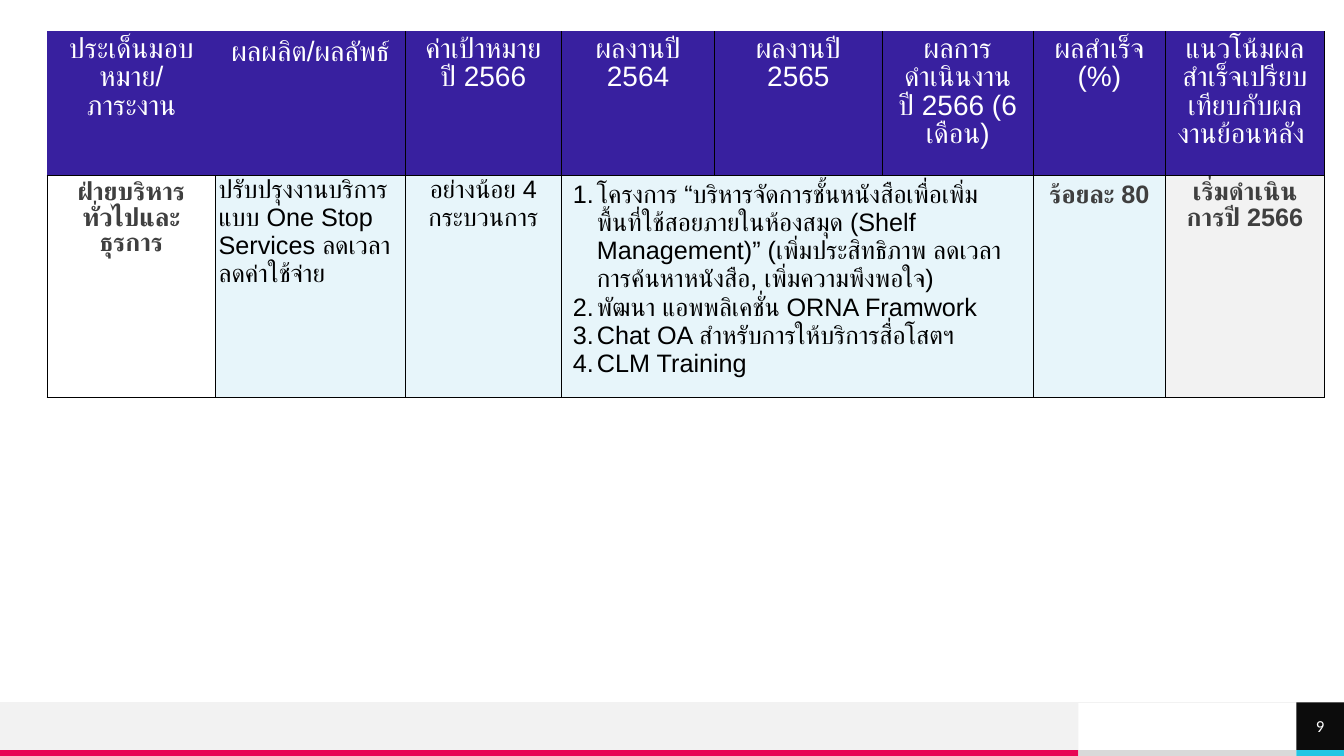
from lxml.etree import SubElement
from pptx import Presentation
from pptx.dml.color import RGBColor
from pptx.enum.shapes import MSO_CONNECTOR, MSO_SHAPE
from pptx.enum.text import MSO_ANCHOR, PP_ALIGN
from pptx.oxml.ns import qn
from pptx.util import Cm, Pt

BLACK = RGBColor(0x00, 0x00, 0x00)
INK = RGBColor(0x0C, 0x0C, 0x0C)
DARK = RGBColor(0x3F, 0x3F, 0x3F)
WHITE = RGBColor(0xFF, 0xFF, 0xFF)
LIGHT = RGBColor(0xF2, 0xF2, 0xF2)
SILVER = RGBColor(0xD9, 0xD9, 0xD9)
VIOLET = RGBColor(0x38, 0x20, 0x9F)
PALE_BLUE = RGBColor(0xE7, 0xF5, 0xFA)
CYAN = RGBColor(0x25, 0xC6, 0xE3)
PINK = RGBColor(0xE8, 0x05, 0x54)

COLUMN_WIDTHS = (4.24, 4.78, 3.94, 3.86, 4.22, 3.81, 3.33, 4.01)
ROW_HEIGHTS = (3.63, 5.59)
HEADERS = (
    "ประเด็นมอบหมาย/\nภาระงาน",
    "ผลผลิต/ผลลัพธ์",
    "ค่าเป้าหมาย\nปี 2566",
    "ผลงานปี 2564",
    "ผลงานปี 2565",
    "ผลการดำเนินงาน\nปี 2566 (6 เดือน)",
    "ผลสำเร็จ (%)",
    "แนวโน้มผลสำเร็จเปรียบเทียบกับผลงานย้อนหลัง ",
)
PROJECTS = "\n".join((
    "โครงการ “บริหารจัดการชั้นหนังสือเพื่อเพิ่มพื้นที่ใช้สอยภายในห้องสมุด (Shelf Management)” "
    "(เพิ่มประสิทธิภาพ ลดเวลาการค้นหาหนังสือ, เพิ่มความพึงพอใจ)",
    "พัฒนา แอพพลิเคชั่น ORNA Framwork",
    "Chat OA สำหรับการให้บริการสื่อโสตฯ",
    "CLM Training",
))
PROJECTS_COLUMN = 3
BODY = {
    0: ("ฝ่ายบริหารทั่วไปและธุรการ", WHITE, DARK, True, PP_ALIGN.CENTER, 0.9),
    1: ("ปรับปรุงงานบริการแบบ One Stop Services ลดเวลา ลดค่าใช้จ่าย",
        PALE_BLUE, BLACK, False, PP_ALIGN.LEFT, 1.0),
    2: ("อย่างน้อย 4 กระบวนการ", PALE_BLUE, BLACK, False, PP_ALIGN.CENTER, 1.0),
    PROJECTS_COLUMN: (PROJECTS, PALE_BLUE, BLACK, False, PP_ALIGN.LEFT, 1.0),
    6: ("ร้อยละ 80", PALE_BLUE, DARK, True, PP_ALIGN.CENTER, 1.0),
    7: ("เริ่มดำเนินการปี 2566", LIGHT, DARK, True, PP_ALIGN.CENTER, 0.9),
}
TIGHT_COLUMNS = (1, 2)
BAR_TOP, BAR_HEIGHT = 17.7, 1.2
STRIP_TOP, STRIP_HEIGHT = 18.9, 0.15


def format_run(r, size, color, font, bold=False):
    r.font.size = Pt(size)
    r.font.name = font
    r.font.bold = bold
    r.font.color.rgb = color
    SubElement(r.font._element, qn("a:cs"), typeface=font)


def set_borders(cell, **colors):
    tcPr = cell._tc.get_or_add_tcPr()
    for i, side in enumerate("LRTB"):
        color = colors.get(side)
        ln = SubElement(tcPr, qn(f"a:ln{side}"), w=str(Pt(1)))
        if color is None:
            SubElement(ln, qn("a:noFill"))
        else:
            fill = SubElement(ln, qn("a:solidFill"))
            SubElement(fill, qn("a:srgbClr"), val=str(color))
        tcPr.insert(i, ln)


def fill_cell(cell, text, fill, size, color, bold, align, spacing):
    cell.fill.solid()
    cell.fill.fore_color.rgb = fill
    cell.text_frame.text = text
    for p in cell.text_frame.paragraphs:
        p.alignment = align
        p.line_spacing = spacing
        for r in p.runs:
            format_run(r, size, color, "Arial", bold)


def number_paragraphs(tf):
    for p in tf.paragraphs:
        pPr = p._p.get_or_add_pPr()
        pPr.set("marL", str(Cm(0.64)))
        pPr.set("indent", str(Cm(-0.61)))
        SubElement(pPr, qn("a:buFont"), typeface="Arial")
        SubElement(pPr, qn("a:buAutoNum"), type="arabicPeriod")


def add_results_table(s):
    table = s.shapes.add_table(
        len(ROW_HEIGHTS), len(COLUMN_WIDTHS), Cm(1.19), Cm(0.79),
        Cm(sum(COLUMN_WIDTHS)), Cm(sum(ROW_HEIGHTS))).table
    table.first_row = False
    table.horz_banding = False
    for column, width in zip(table.columns, COLUMN_WIDTHS):
        column.width = Cm(width)
    for row, height in zip(table.rows, ROW_HEIGHTS):
        row.height = Cm(height)

    for i, header in enumerate(HEADERS):
        cell = table.cell(0, i)
        spacing = 1.0 if i == 1 else 0.9
        fill_cell(cell, header, VIOLET, 20, WHITE, False, PP_ALIGN.CENTER, spacing)
        set_borders(cell, B=BLACK, L=BLACK if i > 1 else None,
                    R=BLACK if i > 0 else None)
        set_borders(table.cell(1, i), L=BLACK, R=BLACK, T=BLACK, B=BLACK)

    projects = table.cell(1, PROJECTS_COLUMN)
    projects.merge(table.cell(1, PROJECTS_COLUMN + 2))
    for i, (text, fill, color, bold, align, spacing) in BODY.items():
        fill_cell(table.cell(1, i), text, fill, 18, color, bold, align, spacing)
    for i in TIGHT_COLUMNS:
        cell = table.cell(1, i)
        cell.margin_left = cell.margin_right = Cm(0.08)
        cell.margin_top = cell.margin_bottom = 0
    projects.margin_right = Cm(0.5)
    number_paragraphs(projects.text_frame)


def add_block(s, left, top, width, height, color):
    sp = s.shapes.add_shape(MSO_SHAPE.RECTANGLE, Cm(left), Cm(top), Cm(width), Cm(height))
    sp.shadow.inherit = False
    sp.fill.solid()
    sp.fill.fore_color.rgb = color
    sp.line.fill.background()
    return sp


def add_rule(s, left, right, y, color):
    line = s.shapes.add_connector(MSO_CONNECTOR.STRAIGHT, Cm(right), Cm(y), Cm(left), Cm(y))
    line.line.color.rgb = color
    line.line.width = Pt(0.75)
    SubElement(line._element.spPr, qn("a:effectLst"))


def add_page_number(s):
    sp = add_block(s, 32.67, BAR_TOP, 1.2, BAR_HEIGHT, INK)
    tf = sp.text_frame
    tf.margin_left = tf.margin_right = tf.margin_top = tf.margin_bottom = 0
    tf.vertical_anchor = MSO_ANCHOR.MIDDLE
    p = tf.paragraphs[0]
    p.text = "9"
    p.alignment = PP_ALIGN.CENTER
    format_run(p.runs[0], 12, WHITE, "Calibri")


def main():
    prs = Presentation()
    prs.slide_width, prs.slide_height = Cm(33.87), Cm(19.05)
    s = prs.slides.add_slide(prs.slide_layouts[6])
    add_block(s, 0, BAR_TOP, 27.18, BAR_HEIGHT, LIGHT)
    for left, width, color in ((0, 27.18, PINK), (27.18, 5.49, SILVER), (32.67, 1.2, CYAN)):
        add_block(s, left, STRIP_TOP, width, STRIP_HEIGHT, color)
    add_rule(s, 0, 33.87, BAR_TOP, LIGHT)
    add_results_table(s)
    add_page_number(s)
    prs.save("out.pptx")


if __name__ == "__main__":
    main()
